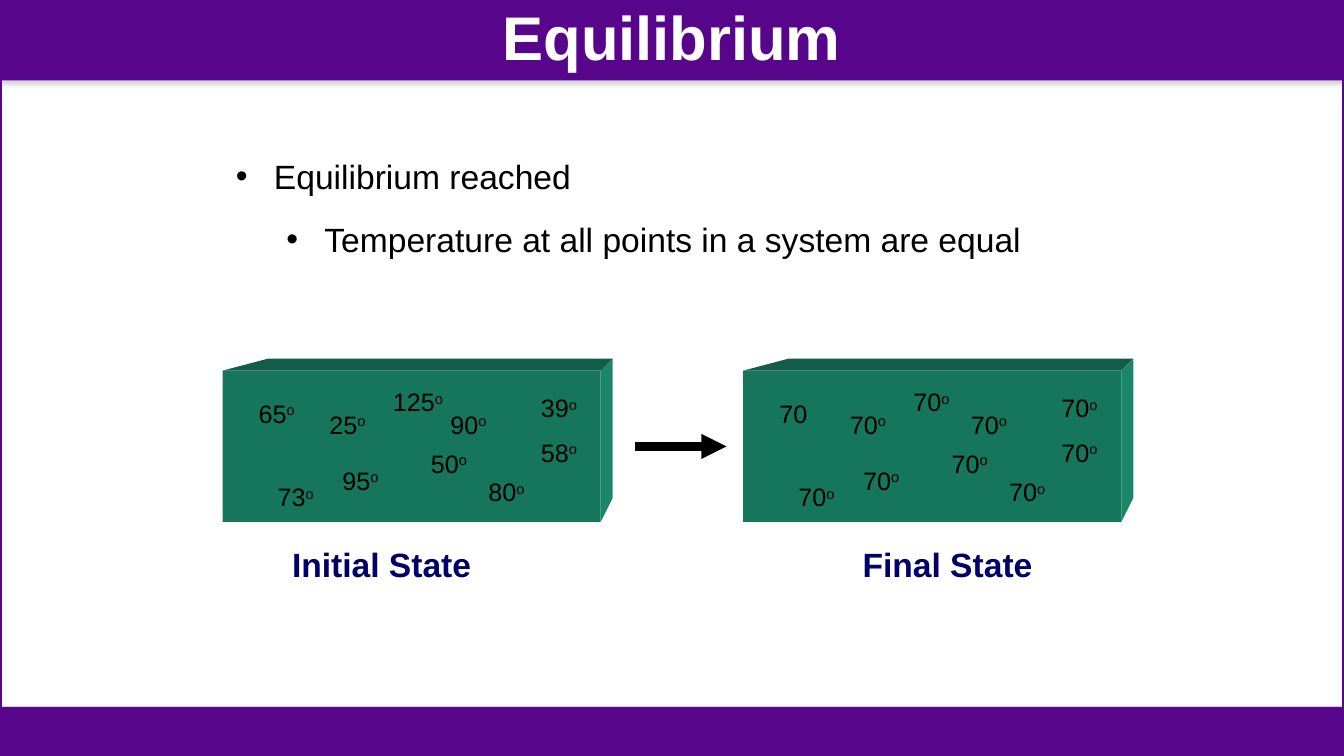
"""Build the slide on thermal equilibrium."""
from dataclasses import dataclass

from lxml import etree
from pptx import Presentation
from pptx.dml.color import RGBColor
from pptx.enum.shapes import MSO_CONNECTOR, MSO_SHAPE
from pptx.enum.text import MSO_ANCHOR, MSO_AUTO_SIZE, PP_ALIGN
from pptx.oxml.ns import qn
from pptx.util import Cm, Pt

RECTANGLE = MSO_SHAPE.RECTANGLE
STRAIGHT = MSO_CONNECTOR.STRAIGHT
CENTER, LEFT = PP_ALIGN.CENTER, PP_ALIGN.LEFT
MIDDLE, TOP = MSO_ANCHOR.MIDDLE, MSO_ANCHOR.TOP
NO_FIT = MSO_AUTO_SIZE.NONE

COLOURS = {
    "purple": "57068C", "white": "FFFFFF", "black": "000000", "grey": "808080",
    "navy": "000066", "front": "16765B", "top": "115D48", "side": "1A8868",
}
FONT = "Arial"
SLIDE_WIDTH, SLIDE_HEIGHT = 33.87, 19.05
HEADER_HEIGHT, FOOTER_TOP = 2.03, 17.81
BLOCK_TOP, BLOCK_WIDTH, BLOCK_HEIGHT = 9.34, 9.53, 3.81
DEPTH_X, DEPTH_Y = 0.3, 0.3
TOP_SLANT, SIDE_SLANT = 1.14, 0.6
LABEL_SPOTS = [
    (0.66, 0.56), (1.14, 2.67), (4.04, 0.28), (5.0, 1.83), (7.77, 0.43),
    (2.44, 0.84), (6.45, 2.54), (2.77, 2.26), (5.49, 0.84), (7.77, 1.55),
]


@dataclass
class State:
    """A block with its temperatures and its caption."""
    left: float
    temperatures: list[str]
    caption: str
    caption_left: float


@dataclass
class Bullet:
    """One line of the list."""
    text: str
    level: int
    indent: float
    space_before: float


STATES = [
    State(5.61, ["65o", "73o", "125o", "50o", "39o", "25o", "80o", "95o", "90o", "58o"],
          "Initial State", 7.11),
    State(18.73, ["70"] + ["70o"] * 9, "Final State", 21.49),
]
BULLETS = [
    Bullet("Equilibrium reached", 0, 0.96, 0),
    Bullet("Temperature at all points in a system are equal", 1, 2.23, 1.5),
]


def colour(name: str) -> RGBColor:
    """Return a named colour."""
    return RGBColor.from_string(COLOURS[name])


def format_runs(para, size: float, colour_name: str, bold: bool = False) -> None:
    """Give every run of a paragraph its font."""
    for span in para.runs:
        span.font.name = FONT
        span.font.size = Pt(size)
        span.font.bold = bold
        span.font.color.rgb = colour(colour_name)


def paint(shape, colour_name: str) -> None:
    """Fill a shape plainly, without outline or shadow."""
    shape.shadow.inherit = False
    shape.fill.solid()
    shape.fill.fore_color.rgb = colour(colour_name)
    shape.line.fill.background()


def add_band(slide, top: float, height: float) -> None:
    """Add a full-width purple band with a soft shadow."""
    band = slide.shapes.add_shape(RECTANGLE, 0, Cm(top), Cm(SLIDE_WIDTH), Cm(height))
    paint(band, "purple")
    effects = band._element.spPr.find(qn("a:effectLst"))
    shadow = etree.SubElement(effects, qn("a:outerShdw"), blurRad="39370",
                              dist="22860", dir="5400000", rotWithShape="0")
    tone = etree.SubElement(shadow, qn("a:srgbClr"), val=COLOURS["grey"])
    etree.SubElement(tone, qn("a:alpha"), val="35000")


def add_frame(slide) -> None:
    """Outline the slide in purple."""
    frame = slide.shapes.add_shape(RECTANGLE, 0, 0, Cm(SLIDE_WIDTH), Cm(SLIDE_HEIGHT))
    frame.shadow.inherit = False
    frame.fill.background()
    frame.line.color.rgb = colour("purple")
    frame.line.width = Pt(2.25)


def place(holder, left: float, top: float, width: float, height: float, anchor) -> None:
    """Move a placeholder to its spot and bring it forward."""
    holder.left, holder.top = Cm(left), Cm(top)
    holder.width, holder.height = Cm(width), Cm(height)
    holder.text_frame.auto_size = NO_FIT
    holder.text_frame.vertical_anchor = anchor
    holder._element.getparent().append(holder._element)


def fill_title(title) -> None:
    """Write the title in the header band."""
    place(title, 0, 0, SLIDE_WIDTH, HEADER_HEIGHT, MIDDLE)
    title.text_frame.text = "Equilibrium"
    para = title.text_frame.paragraphs[0]
    para.alignment = CENTER
    para.line_spacing = 0.9
    format_runs(para, 44, "white", True)


def fill_list(body) -> None:
    """Write the bulleted list."""
    place(body, 5.69, 3.3, 20.35, 5.5, TOP)
    frame = body.text_frame
    for index, bullet in enumerate(BULLETS):
        para = frame.add_paragraph() if index else frame.paragraphs[0]
        para.text = bullet.text
        para.level = bullet.level
        para.alignment = LEFT
        para.line_spacing = 1.5
        para.space_before = Pt(bullet.space_before)
        properties = para._p.get_or_add_pPr()
        properties.set("marL", str(Cm(bullet.indent)))
        properties.set("indent", str(-Cm(0.96)))
        etree.SubElement(properties, qn("a:buFont"), typeface=FONT)
        etree.SubElement(properties, qn("a:buChar"), char="•")
        format_runs(para, 24, "black")


def add_text(shapes, left: float, top: float, width: float, height: float, text: str):
    """Add a wrapped text box and return its paragraph."""
    box = shapes.add_textbox(Cm(left), Cm(top), Cm(width), Cm(height))
    box.text_frame.word_wrap = True
    box.text_frame.margin_right = 0
    box.text_frame.text = text
    return box.text_frame.paragraphs[0]


def add_face(shapes, corners: list[tuple[float, float]], colour_name: str) -> None:
    """Add one slanted face of a block."""
    points = [(Cm(x), Cm(y)) for x, y in corners]
    builder = shapes.build_freeform(*points[0])
    builder.add_line_segments(points[1:], close=True)
    paint(builder.convert_to_shape(), colour_name)


def add_state(slide, state: State) -> None:
    """Add a block with its temperatures and caption."""
    shapes = slide.shapes.add_group_shape().shapes
    left, right = state.left, state.left + BLOCK_WIDTH
    bottom = BLOCK_TOP + BLOCK_HEIGHT
    back_right, back_top = right + DEPTH_X, BLOCK_TOP - DEPTH_Y
    front = shapes.add_shape(RECTANGLE, Cm(left), Cm(BLOCK_TOP), Cm(BLOCK_WIDTH), Cm(BLOCK_HEIGHT))
    paint(front, "front")
    add_face(shapes, [(left, BLOCK_TOP), (left + TOP_SLANT, back_top),
                      (back_right, back_top), (right, BLOCK_TOP)], "top")
    add_face(shapes, [(right, BLOCK_TOP), (back_right, back_top),
                      (back_right, bottom - SIDE_SLANT), (right, bottom)], "side")
    for (x, y), temperature in zip(LABEL_SPOTS, state.temperatures):
        number = temperature.rstrip("o")
        width = 1.78 if len(number) > 2 else 1.45
        para = add_text(shapes, left + x, BLOCK_TOP + y, width, 1.02, number)
        if number != temperature:
            degree = para.add_run()
            degree.text = "o"
            degree._r.get_or_add_rPr().set("baseline", "30000")
        format_runs(para, 18, "black")
    caption = add_text(slide.shapes, state.caption_left, 13.59, 5.51, 2.64, state.caption)
    format_runs(caption, 24, "navy", True)


def add_arrow(slide) -> None:
    """Add the arrow between the two states."""
    arrow = slide.shapes.add_connector(STRAIGHT, Cm(16), Cm(11.25), Cm(18.31), Cm(11.25))
    arrow.line.color.rgb = colour("black")
    arrow.line.width = Pt(6)
    etree.SubElement(arrow.line._get_or_add_ln(), qn("a:tailEnd"), type="triangle")
    etree.SubElement(arrow._element.spPr, qn("a:effectLst"))


def main() -> None:
    """Build and save the deck."""
    deck = Presentation()
    deck.slide_width, deck.slide_height = Cm(SLIDE_WIDTH), Cm(SLIDE_HEIGHT)
    page = deck.slides.add_slide(deck.slide_layouts[1])
    add_band(page, 0, HEADER_HEIGHT)
    add_frame(page)
    add_band(page, FOOTER_TOP, SLIDE_HEIGHT - FOOTER_TOP)
    fill_title(page.shapes.title)
    fill_list(page.placeholders[1])
    for state in STATES:
        add_state(page, state)
    add_arrow(page)
    deck.save("out.pptx")


if __name__ == "__main__":
    main()
